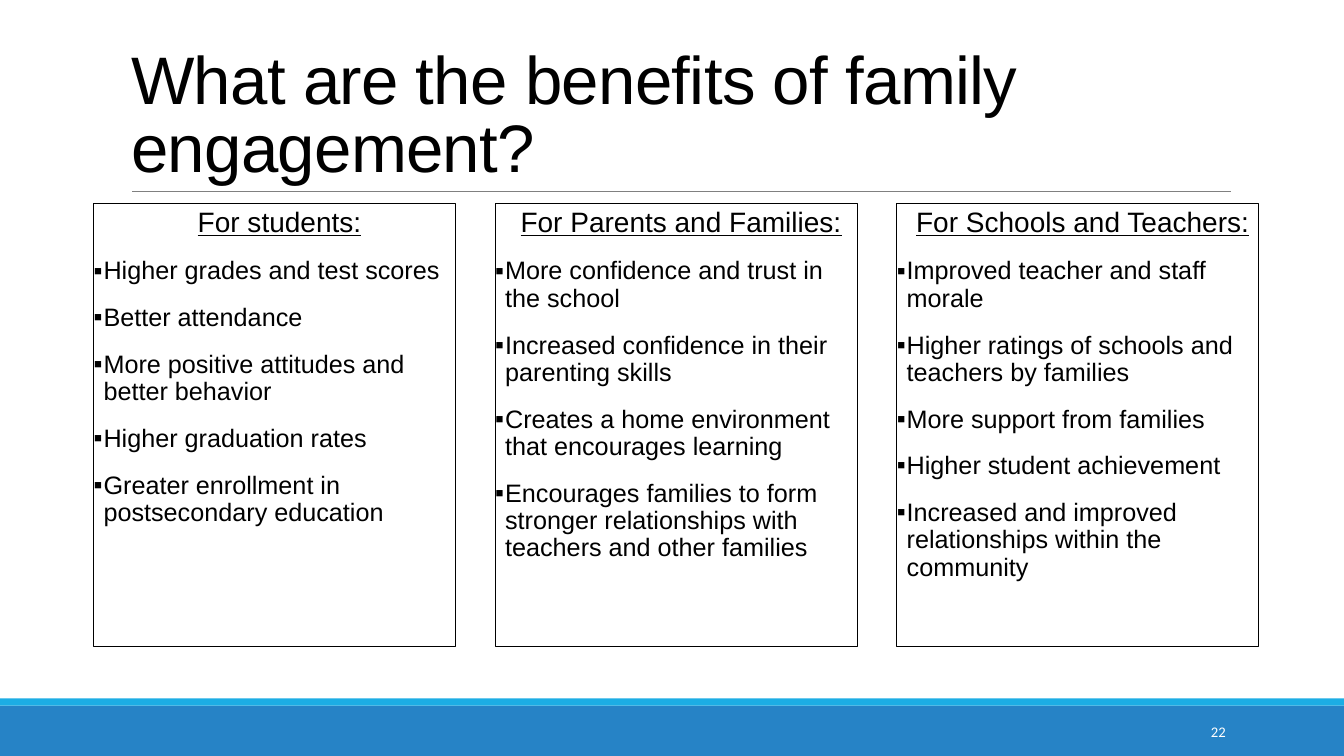
from lxml.etree import SubElement
from pptx import Presentation
from pptx.dml.color import RGBColor
from pptx.enum.shapes import MSO_CONNECTOR, MSO_SHAPE
from pptx.enum.text import MSO_ANCHOR, MSO_AUTO_SIZE, PP_ALIGN
from pptx.oxml.ns import qn
from pptx.util import Cm, Pt

TITLE = "What are the benefits of family engagement?"
GROUPS = [
    ("For students:", [
        "Higher grades and test scores",
        "Better attendance",
        "More positive attitudes and better behavior",
        "Higher graduation rates",
        "Greater enrollment in postsecondary education",
    ]),
    ("For Parents and Families:", [
        "More confidence and trust in the school",
        "Increased confidence in their parenting skills",
        "Creates a home environment that encourages learning",
        "Encourages families to form stronger relationships with teachers and other families",
    ]),
    ("For Schools and Teachers:", [
        "Improved teacher and staff morale",
        "Higher ratings of schools and teachers by families",
        "More support from families",
        "Higher student achievement",
        "Increased and improved relationships within the community",
    ]),
]
BANDS = [("2683C6", 17.78, 1.27), ("1CADE4", 17.6, 0.18)]
PAGE = "22"
WIDE, HIGH = 33.87, 19.05
LEFT, TOP, STEP = 2.36, 5.12, 10.12
BOX_W, BOX_H = 9.12, 11.18


def paint(color):
    return RGBColor.from_string(color)


def place(shape, left, top, width, height):
    shape.left, shape.top = Cm(left), Cm(top)
    shape.width, shape.height = Cm(width), Cm(height)


def write(frame, text, size, font="Arial", color="000000", align=PP_ALIGN.LEFT,
          under=False, space=None, track=None, line=1.0, mark=None):
    para = frame.paragraphs[0]
    if para.runs:
        para = frame.add_paragraph()
    para.alignment, para.line_spacing = align, line
    if space:
        para.space_before, para.space_after = Pt(space[0]), Pt(space[1])
    run = para.add_run()
    run.text = text
    run.font.size, run.font.name = Pt(size), font
    run.font.bold, run.font.underline = False, under
    run.font.color.rgb = paint(color)
    if track:
        run.font._element.set("spc", str(track))
    if mark:
        props = para._p.get_or_add_pPr()
        props.set("marL", str(Cm(0.25)))
        props.set("indent", str(-Cm(0.25)))
        SubElement(props, qn("a:buChar"), char=mark)


def fit(frame, anchor):
    frame.word_wrap = True
    frame.auto_size = MSO_AUTO_SIZE.NONE
    frame.vertical_anchor = anchor


def main():
    deck = Presentation()
    deck.slide_width, deck.slide_height = Cm(WIDE), Cm(HIGH)
    slide = deck.slides.add_slide(deck.slide_layouts[4])
    shapes = slide.shapes

    for color, top, height in BANDS:
        band = shapes.add_shape(MSO_SHAPE.RECTANGLE, 0, Cm(top), Cm(WIDE), Cm(height))
        band.shadow.inherit = False
        band.fill.solid()
        band.fill.fore_color.rgb = paint(color)
        band.line.fill.background()

    rule = shapes.add_connector(MSO_CONNECTOR.STRAIGHT, Cm(3.33), Cm(4.82), Cm(31.01), Cm(4.82))
    rule.line.color.rgb = paint("808080")
    rule.line.width = Pt(0.5)
    SubElement(rule._element.spPr, qn("a:effectLst"))

    title = shapes.title
    place(title, 3.05, 0.79, 27.94, 4.04)
    fit(title.text_frame, MSO_ANCHOR.BOTTOM)
    write(title.text_frame, TITLE, 48, line=0.85, track=-50)

    bodies = [item for item in slide.placeholders if 1 <= item.placeholder_format.idx <= 4]
    for spare in bodies[len(GROUPS):]:
        spare._element.getparent().remove(spare._element)

    for col, (body, (head, points)) in enumerate(zip(bodies, GROUPS)):
        place(body, LEFT + col * STEP, TOP, BOX_W, BOX_H)
        body.line.color.rgb = paint("000000")
        body.line.width = Pt(0.75)
        frame = body.text_frame
        fit(frame, MSO_ANCHOR.TOP)
        frame.margin_left = frame.margin_right = 0
        frame.margin_top = frame.margin_bottom = Cm(0.13)
        style = {"line": 0.9, "space": (12, 2)}
        write(frame, head, 20, align=PP_ALIGN.CENTER, under=True, mark=" ", **style)
        for point in points:
            write(frame, point, 18, mark="▪", **style)

    page = shapes.add_textbox(Cm(27.51), Cm(17.93), Cm(3.63), Cm(1.02))
    fit(page.text_frame, MSO_ANCHOR.MIDDLE)
    write(page.text_frame, PAGE, 10.5, font="Calibri", color="FFFFFF", align=PP_ALIGN.RIGHT)

    deck.save("out.pptx")


if __name__ == "__main__":
    main()
